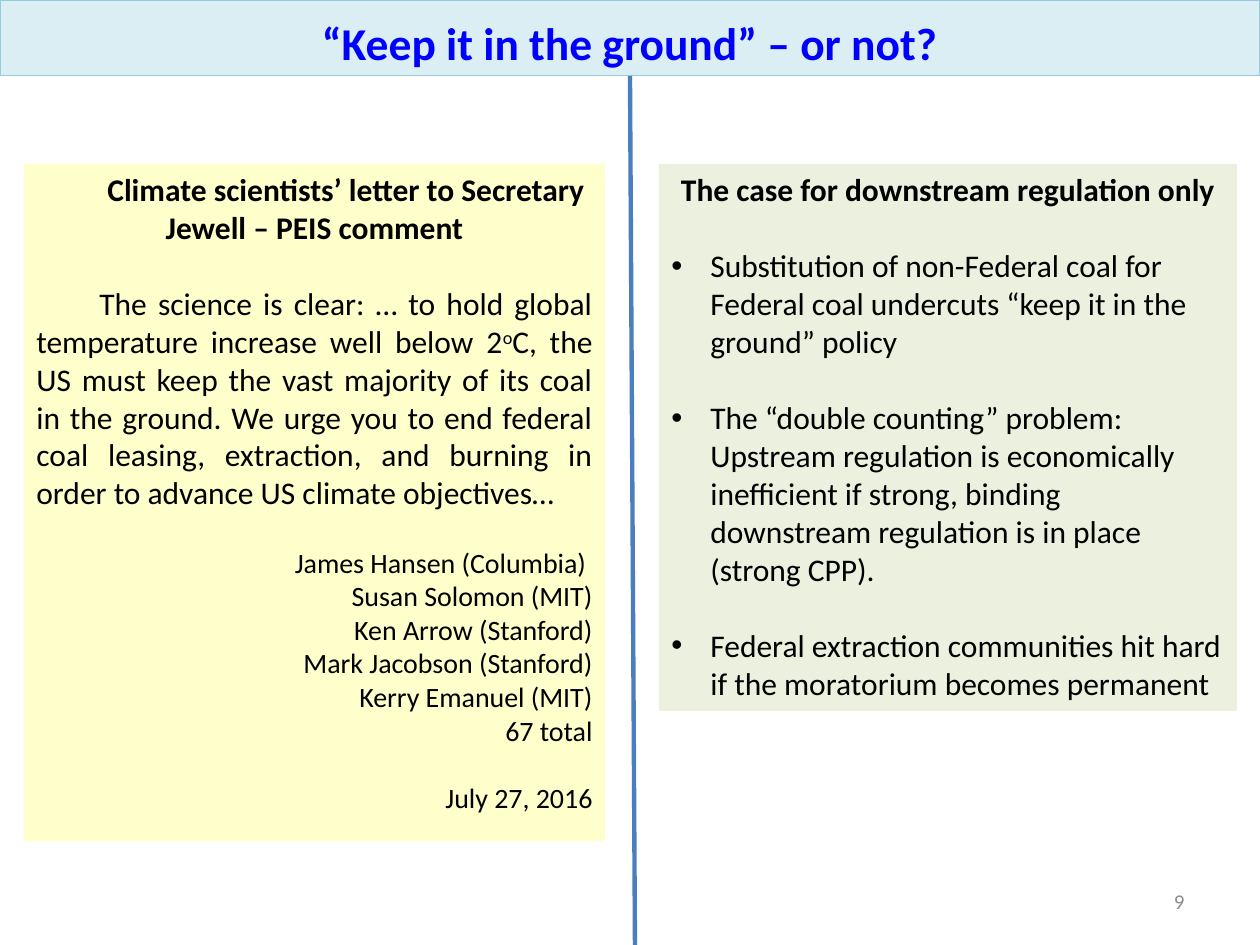
from pptx import Presentation
from pptx.dml.color import RGBColor
from pptx.enum.shapes import MSO_CONNECTOR, MSO_SHAPE
from pptx.enum.text import MSO_ANCHOR, MSO_AUTO_SIZE, PP_ALIGN
from pptx.oxml.ns import qn
from pptx.util import Pt
from lxml.etree import SubElement

PX = 914400 / 126
COLORS = {
    "band": "DBEEF4", "band_line": "93CDDD", "title": "0000FF",
    "letter": "FFFFCC", "case": "EBF1DE", "divider": "4B7EBC",
    "text": "000000", "number": "8C8C8C",
}


def px(n):
    return round(n * PX)


def add_text(tf, text, size=18, color="text", bold=False, align=PP_ALIGN.LEFT,
             before=0, margin=0, indent=0, bullet=False):
    p = tf.paragraphs[0] if not tf.text else tf.add_paragraph()
    p.alignment = align
    if before:
        p.space_before = Pt(before)
    pPr = p._p.get_or_add_pPr()
    pPr.set("marL", str(px(margin)))
    pPr.set("indent", str(px(indent)))
    if bullet:
        SubElement(pPr, qn("a:buFont")).set("typeface", "Arial")
        SubElement(pPr, qn("a:buChar")).set("char", "•")
    for i, part in enumerate(text.split("^")):
        r = p.add_run()
        r.text = part
        r.font.name = "Calibri"
        r.font.size = Pt(size)
        r.font.bold = bold
        r.font.color.rgb = RGBColor.from_string(COLORS[color])
        if i % 2:
            r.font._element.set("baseline", "30000")


prs = Presentation()
prs.slide_width, prs.slide_height = px(1260), px(945)
s = prs.slides.add_slide(prs.slide_layouts[5])

title = s.shapes.title
title.left, title.top, title.width, title.height = px(0), px(0), px(1260), px(76)
title.fill.solid()
title.fill.fore_color.rgb = RGBColor.from_string(COLORS["band"])
title.line.color.rgb = RGBColor.from_string(COLORS["band_line"])
title.line.width = Pt(0)
tf = title.text_frame
tf.auto_size = MSO_AUTO_SIZE.NONE
tf.vertical_anchor = MSO_ANCHOR.BOTTOM
add_text(tf, "“Keep it in the ground” – or not?", size=26, color="title",
         bold=True, align=PP_ALIGN.CENTER)

panels = {}
for name, x, w, h in [("letter", 24, 581, 677), ("case", 659, 578, 547)]:
    sp = s.shapes.add_shape(MSO_SHAPE.RECTANGLE, px(x), px(164), px(w), px(h))
    sp.shadow.inherit = False
    sp.fill.solid()
    sp.fill.fore_color.rgb = RGBColor.from_string(COLORS[name])
    sp.line.fill.background()
    tf = sp.text_frame
    tf.word_wrap = True
    tf.vertical_anchor = MSO_ANCHOR.TOP
    panels[name] = tf

tf = panels["letter"]
add_text(tf, "Climate scientists’ letter to Secretary Jewell – PEIS comment",
         bold=True, align=PP_ALIGN.CENTER, indent=63)
add_text(tf, "The science is clear: … to hold global temperature increase well "
         "below 2^o^C, the US must keep the vast majority of its coal in the "
         "ground. We urge you to end federal coal leasing, extraction, and "
         "burning in order to advance US climate objectives…",
         align=PP_ALIGN.JUSTIFY, before=22, indent=63)
for text, before in [
    ("James Hansen (Columbia) ", 19.5),
    ("Susan Solomon (MIT)", 0),
    ("Ken Arrow (Stanford)", 0),
    ("Mark Jacobson (Stanford)", 0),
    ("Kerry Emanuel (MIT)", 0),
    ("67 total", 0),
    ("July 27, 2016", 19.5),
]:
    add_text(tf, text, size=16, align=PP_ALIGN.RIGHT, before=before)

tf = panels["case"]
add_text(tf, "The case for downstream regulation only", bold=True,
         align=PP_ALIGN.CENTER)
for text in [
    "Substitution of non-Federal coal for Federal coal undercuts “keep it in "
    "the ground” policy",
    "The “double counting” problem: Upstream regulation is economically "
    "inefficient if strong, binding downstream regulation is in place "
    "(strong CPP).",
    "Federal extraction communities hit hard if the moratorium becomes permanent",
]:
    add_text(tf, text, before=22, margin=39, indent=-39, bullet=True)

divider = s.shapes.add_connector(MSO_CONNECTOR.STRAIGHT, px(630), px(76), px(635), px(945))
divider.line.color.rgb = RGBColor.from_string(COLORS["divider"])
divider.line.width = Pt(2.5)
SubElement(divider._element.spPr, qn("a:effectLst"))

number = s.shapes.add_textbox(px(903), px(876), px(294), px(50))
tf = number.text_frame
tf.word_wrap = True
tf.vertical_anchor = MSO_ANCHOR.MIDDLE
add_text(tf, "9", size=12, color="number", align=PP_ALIGN.RIGHT)

prs.save("out.pptx")
